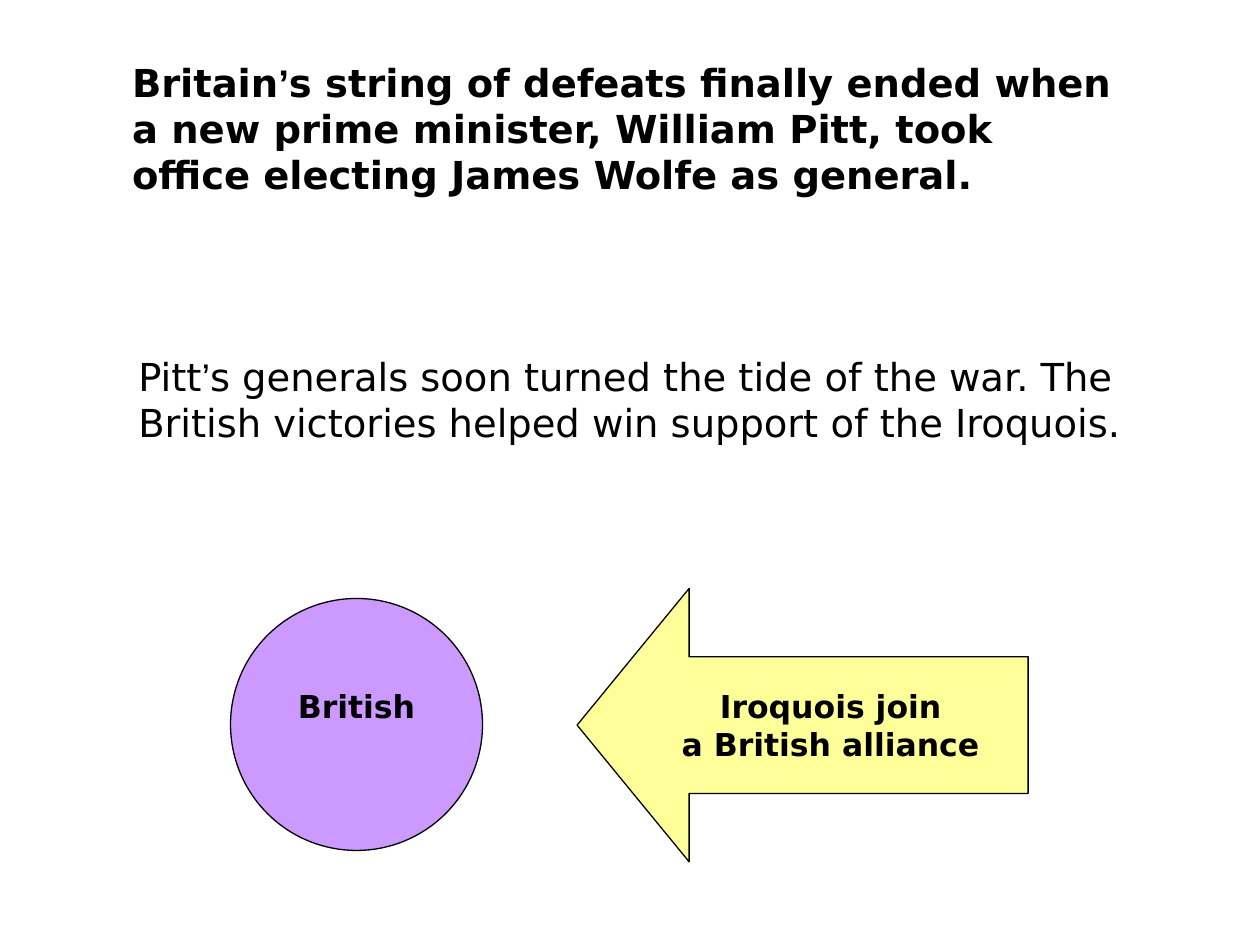
from dataclasses import dataclass

from pptx import Presentation
from pptx.dml.color import RGBColor
from pptx.enum.shapes import MSO_SHAPE
from pptx.enum.text import MSO_ANCHOR, MSO_AUTO_SIZE, PP_ALIGN
from pptx.util import Inches, Pt

CIRCLE = MSO_SHAPE.OVAL
LEFT_ARROW = MSO_SHAPE.LEFT_ARROW
MIDDLE = MSO_ANCHOR.MIDDLE
CENTER = PP_ALIGN.CENTER
FIT_SHAPE = MSO_AUTO_SIZE.SHAPE_TO_FIT_TEXT
BLANK_LAYOUT = 6
APOSTROPHE = "’"


@dataclass(frozen=True)
class Theme:
    """Colours, fonts and type sizes of the slide."""
    ink: RGBColor = RGBColor(0x00, 0x00, 0x00)
    british: RGBColor = RGBColor(0xCC, 0x99, 0xFF)
    iroquois: RGBColor = RGBColor(0xFF, 0xFF, 0x99)
    font: str = "DejaVu Sans"
    apostrophe_font: str = "Arial"
    body_size: Pt = Pt(22)
    label_size: Pt = Pt(18)
    outline: Pt = Pt(0.75)


THEME = Theme()


def set_attributes(target, values):
    """Set each named value on the target."""
    for name, value in values.items():
        setattr(target, name, value)


def add_run(paragraph, text, size, bold, font=THEME.font):
    """Add one formatted run to a paragraph."""
    run = paragraph.add_run()
    run.text = text
    set_attributes(run.font, {"name": font, "size": size, "bold": bold})
    run.font.color.rgb = THEME.ink


def add_statement(slide, box, text, bold=False):
    """Add a wrapped sentence whose apostrophe has its own font."""
    shape = slide.shapes.add_textbox(*map(Inches, box))
    set_attributes(shape.text_frame, {"word_wrap": True, "auto_size": FIT_SHAPE})
    paragraph = shape.text_frame.paragraphs[0]
    before, mark, after = text.partition(APOSTROPHE)
    add_run(paragraph, before, THEME.body_size, bold)
    add_run(paragraph, mark, THEME.body_size, bold, THEME.apostrophe_font)
    add_run(paragraph, after, THEME.body_size, bold)


def add_labelled_shape(slide, kind, box, fill, lines, bottom=0.05):
    """Add an outlined shape with centred bold lines and return it."""
    shape = slide.shapes.add_shape(kind, *map(Inches, box))
    shape.shadow.inherit = False
    shape.fill.solid()
    shape.fill.fore_color.rgb = fill
    shape.line.color.rgb = THEME.ink
    shape.line.width = THEME.outline
    frame = shape.text_frame
    set_attributes(frame, {"word_wrap": False, "vertical_anchor": MIDDLE,
                           "margin_bottom": Inches(bottom)})
    for index, line in enumerate(lines):
        paragraph = frame.add_paragraph() if index else frame.paragraphs[0]
        paragraph.alignment = CENTER
        add_run(paragraph, line, THEME.label_size, True)
    return shape


def main():
    """Build and save the slide."""
    presentation = Presentation()
    set_attributes(presentation, {"slide_width": Inches(10),
                                  "slide_height": Inches(7.5)})
    slide = presentation.slides.add_slide(presentation.slide_layouts[BLANK_LAYOUT])
    add_statement(slide, (0.95, 0.42, 8, 1.21),
                  "Britain’s string of defeats finally ended when a new prime minister, "
                  "William Pitt, took office electing James Wolfe as general.", bold=True)
    add_statement(slide, (1, 2.75, 8, 1.21),
                  "Pitt’s generals soon turned the tide of the war. "
                  "The British victories helped win support of the Iroquois.")
    add_labelled_shape(slide, CIRCLE, (1.83, 4.75, 2, 2), THEME.british,
                       ["British"], bottom=0.34)
    arrow = add_labelled_shape(slide, LEFT_ARROW, (4.58, 4.67, 3.58, 2.17),
                               THEME.iroquois, ["Iroquois join", "a British alliance"])
    arrow.adjustments[1] = 0.41
    presentation.save("out.pptx")


if __name__ == "__main__":
    main()
